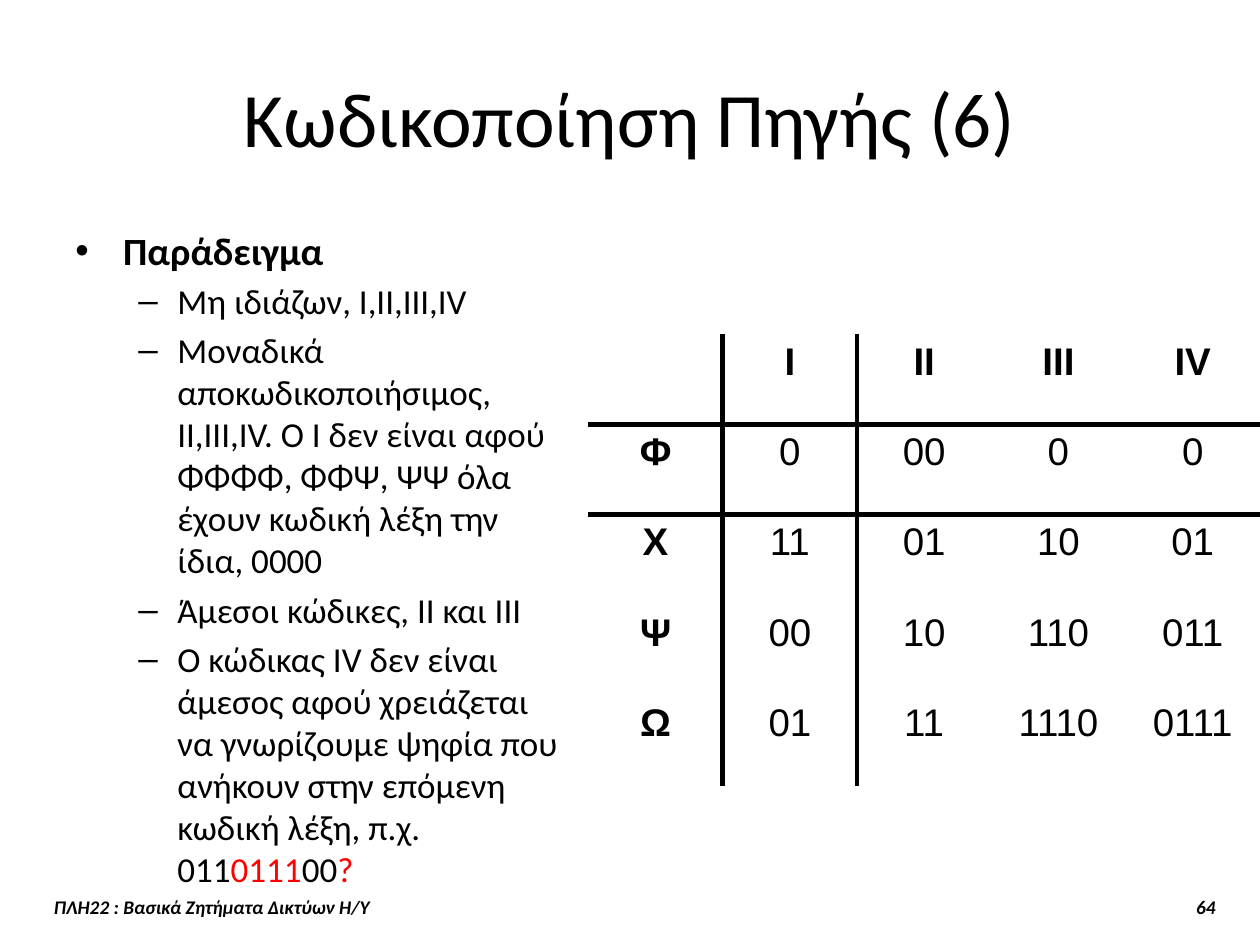
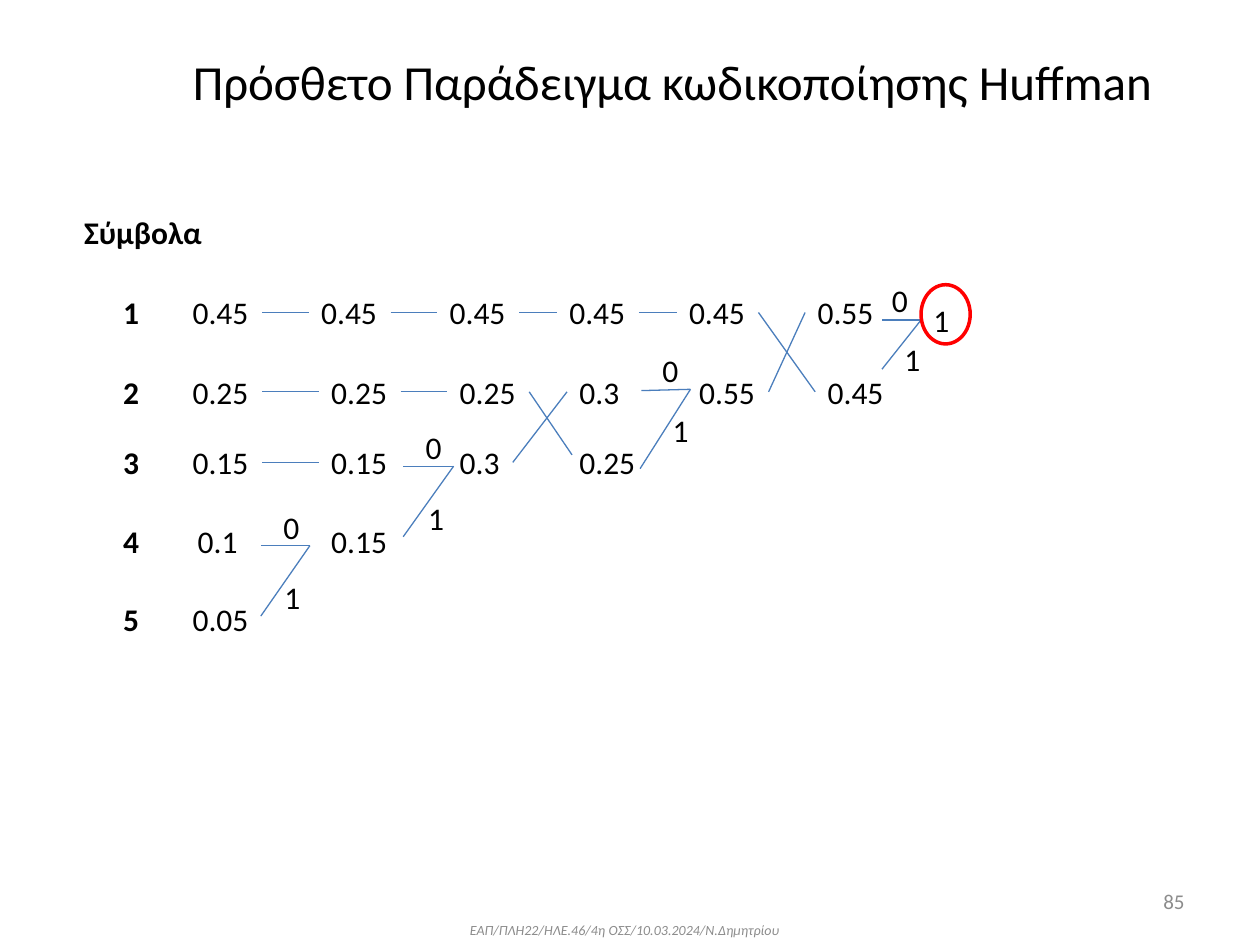
from dataclasses import dataclass

from lxml import etree
from pptx import Presentation
from pptx import util as u
from pptx.dml.color import RGBColor
from pptx.enum import shapes, text
from pptx.oxml import ns

LEFT, CENTER, RIGHT = text.PP_ALIGN.LEFT, text.PP_ALIGN.CENTER, text.PP_ALIGN.RIGHT
MIDDLE = text.MSO_ANCHOR.MIDDLE


@dataclass(frozen=True)
class Theme:
    font: str = "Calibri"
    table_font: str = "Arial"
    ink: str = "000000"
    accent: str = "FF0000"
    branch: str = "4B7EBC"
    muted: str = "8C8C8C"
    title: int = 44
    subtitle: int = 28
    head: int = 22
    body: int = 20
    label: int = 18
    number: int = 12
    footer: int = 11
    credit: int = 8


T = Theme()

POINTS = [
    ["Μη ιδιάζων, Ι,ΙΙ,ΙΙΙ,ΙV"],
    ["Μοναδικά αποκωδικοποιήσιμος, ΙΙ,ΙΙΙ,ΙV. Ο Ι δεν είναι αφού ΦΦΦΦ, ΦΦΨ, ΨΨ όλα "
     "έχουν κωδική λέξη την ίδια, 0000"],
    ["Άμεσοι κώδικες, ΙΙ και ΙΙΙ"],
    ["Ο κώδικας ΙV δεν είναι άμεσος αφού χρειάζεται να γνωρίζουμε ψηφία που ανήκουν "
     "στην επόμενη κωδική λέξη, π.χ. 011", "0111", "00", "?"],
]
CODES = [
    ["", "Ι", "ΙΙ", "ΙΙΙ", "ΙV"],
    ["Φ", "0", "00", "0", "0"],
    ["Χ", "11", "01", "10", "01"],
    ["Ψ", "00", "10", "110", "011"],
    ["Ω", "01", "11", "1110", "0111"],
]

# Huffman reduction: one row per symbol, one column per stage
STAGE_X = [1.43, 2.45, 3.47, 4.42, 5.37, 6.39]
ROW_Y = [2.28, 2.91, 3.47, 4.09, 4.71]
LOWER_SHIFT = 0.08
PROBABILITIES = [
    ["0.45", "0.45", "0.45", "0.45", "0.45", "0.55"],
    ["0.25", "0.25", "0.25", "0.3", "0.55", "0.45"],
    ["0.15", "0.15", "0.3", "0.25"],
    ["0.1", "0.15"],
    ["0.05"],
]
CARRIED = [4, 2, 1]  # straight links at the start of each row
SWAPS = [((2, 2), (1, 3)), ((0, 4), (1, 5)), ((1, 4), (0, 5))]
# upper start, lower start, tip, place of "0", place of "1"
MERGES = [
    ((2.07, 4.33), (2.07, 4.89), (2.46, 4.33), (2.15, 3.98), (2.16, 4.54)),
    ((3.2, 3.7), (3.2, 4.26), (3.6, 3.7), (3.28, 3.35), (3.3, 3.91)),
    ((5.09, 3.1), (5.08, 3.72), (5.48, 3.09), (5.16, 2.74), (5.24, 3.21)),
    ((7, 2.54), (7, 2.93), (7.31, 2.54), (6.98, 2.18), (7.08, 2.65)),
]


def inches(*values):
    return [u.Inches(v) for v in values]


def style(r, size, color=T.ink, font=T.font, bold=False, italic=False):
    f = r.font
    f.name, f.size, f.bold, f.italic = font, u.Pt(size), bold, italic
    f.color.rgb = RGBColor.from_string(color)


def add_title(s, words, box, size, align=CENTER, wrap=True):
    sp = s.shapes.title
    sp.left, sp.top, sp.width, sp.height = inches(*box)
    tf = sp.text_frame
    tf.text = words
    tf.word_wrap = wrap
    tf.auto_size = text.MSO_AUTO_SIZE.NONE
    tf.vertical_anchor = MIDDLE
    p = tf.paragraphs[0]
    p.alignment = align
    style(p.runs[0], size)


def add_text(s, words, box, size, align=LEFT, anchor=None, wrap=False, **look):
    sp = s.shapes.add_textbox(*inches(*box))
    tf = sp.text_frame
    tf.text = words
    tf.word_wrap = wrap
    tf.vertical_anchor = anchor
    p = tf.paragraphs[0]
    p.alignment = align
    for r in p.runs:
        style(r, size, **look)
    return sp


def add_label(s, words, x, y, width=0.33, **look):
    return add_text(s, words, (x, y, width, 0.4), T.label, **look)


def set_bullet(p, mark, margin, hang):
    pPr = p._p.get_or_add_pPr()
    pPr.set("marL", str(u.Inches(margin)))
    pPr.set("indent", str(-u.Inches(hang)))
    etree.SubElement(pPr, ns.qn("a:buFont")).set("typeface", "Arial")
    etree.SubElement(pPr, ns.qn("a:buChar")).set("char", mark)


def add_points(s, heading, points, box):
    tf = s.shapes.add_textbox(*inches(*box)).text_frame
    tf.word_wrap = True
    p = tf.paragraphs[0]
    p.text = heading
    set_bullet(p, "•", 0.38, 0.38)
    style(p.runs[0], T.head, bold=True)
    for pieces in points:
        p = tf.add_paragraph()
        p.level = 1
        p.space_before = u.Pt(0.2 * T.body)
        set_bullet(p, "–", 0.81, 0.31)
        for i, piece in enumerate(pieces):
            r = p.add_run()
            r.text = piece
            style(r, T.body, T.accent if i % 2 else T.ink)


def set_borders(cell, sides):
    """Draw 3 pt rules on the given sides, in the order L, R, T, B."""
    tcPr = cell._tc.get_or_add_tcPr()
    for i, side in enumerate(sides):
        ln = etree.Element(ns.qn(f"a:ln{side}"), w=str(u.Pt(3)))
        fill = etree.SubElement(ln, ns.qn("a:solidFill"))
        etree.SubElement(fill, ns.qn("a:srgbClr")).set("val", T.ink)
        tcPr.insert(i, ln)


def add_code_table(s, rows, box):
    table = s.shapes.add_table(len(rows), len(rows[0]), *inches(*box)).table
    table.first_row = table.horz_banding = False
    no_style = "{2D5ABB26-0587-4C30-8999-92F81FD0307C}"
    table._tbl.tblPr.find(ns.qn("a:tableStyleId")).text = no_style
    for i, row in enumerate(rows):
        for j, words in enumerate(row):
            cell = table.cell(i, j)
            cell.fill.background()
            sides = {0: "R", 1: "L"}.get(j, "") + {0: "B", 1: "T"}.get(i, "")
            set_borders(cell, sides)
            p = cell.text_frame.paragraphs[0]
            p.alignment = CENTER
            p.text = words
            for r in p.runs:
                style(r, T.head, font=T.table_font, bold=i == 0 or j == 0)


def add_line(s, start, end):
    line = s.shapes.add_connector(shapes.MSO_CONNECTOR.STRAIGHT, *inches(*start, *end))
    line.line.color.rgb = RGBColor.from_string(T.branch)
    line.line.width = u.Pt(0.75)
    etree.SubElement(line._element.spPr, ns.qn("a:effectLst"))
    return line


def link(s, a, b):
    """Join the right side of box a to the left side of box b."""
    line = add_line(s, (0, 0), (0, 0))
    line.begin_connect(a, 3)
    line.end_connect(b, 1)


def add_ring(s, box):
    sp = s.shapes.add_shape(shapes.MSO_SHAPE.OVAL, *inches(*box))
    sp.shadow.inherit = False
    sp.fill.background()
    sp.line.color.rgb = RGBColor.from_string(T.accent)
    sp.line.width = u.Pt(2)


def add_probabilities(s):
    cells = {}
    for i, row in enumerate(PROBABILITIES):
        add_label(s, str(i + 1), 0.88, ROW_Y[i], bold=True)
        for j, value in enumerate(row):
            x = STAGE_X[j] + (LOWER_SHIFT if i and j else 0)
            if value == "0.1":
                x += LOWER_SHIFT / 2
            width = 0.65 if len(value) == 4 else 0.52
            cells[i, j] = add_label(s, value, x, ROW_Y[i], width)
    return cells


def build_source_coding(prs):
    s = prs.slides.add_slide(prs.slide_layouts[5])
    add_title(s, "Κωδικοποίηση Πηγής (6)", (0.5, 0.3, 9, 1.25), T.title)
    add_points(s, "Παράδειγμα", POINTS, (0.5, 1.75, 4.03, 4.95))
    add_code_table(s, CODES, (4.67, 2.65, 5.33, 3.59))
    footer = add_text(s, "ΠΛΗ22 : Βασικά Ζητήματα Δικτύων Η/Υ\t64", (0.33, 7.02, 9.51, 0.35),
                      T.footer, anchor=MIDDLE, wrap=True, bold=True, italic=True)
    pPr = footer.text_frame.paragraphs[0]._p.get_or_add_pPr()
    tabs = etree.SubElement(pPr, ns.qn("a:tabLst"))
    etree.SubElement(tabs, ns.qn("a:tab"), pos=str(u.Inches(9.22)), algn="r")


def build_huffman(prs):
    s = prs.slides.add_slide(prs.slide_layouts[5])
    add_title(s, "Πρόσθετο Παράδειγμα κωδικοποίησης Huffman", (1.43, 0.36, 7.9, 0.57),
              T.subtitle, LEFT, wrap=False)
    add_label(s, "Σύμβολα", 0.57, 1.64, 1.14, bold=True)
    cells = add_probabilities(s)
    for i, count in enumerate(CARRIED):
        for j in range(count):
            link(s, cells[i, j], cells[i, j + 1])
    for a, b in SWAPS:
        link(s, cells[a], cells[b])
    add_line(s, (4.2, 3.11), (4.54, 3.61))
    for upper, lower, tip, zero, one in MERGES:
        add_line(s, upper, tip)
        add_line(s, lower, tip)
        add_label(s, "0", *zero)
        add_label(s, "1", *one)
    add_label(s, "1", 7.31, 2.34, 0.56, wrap=True)
    add_ring(s, (7.31, 2.26, 0.39, 0.47))
    add_text(s, "85", (7.17, 6.95, 2.33, 0.4), T.number, RIGHT, MIDDLE, True, color=T.muted)
    add_text(s, "ΕΑΠ/ΠΛΗ22/ΗΛΕ.46/4η ΟΣΣ/10.03.2024/Ν.Δημητρίου", (2.97, 7.18, 3.98, 0.4),
             T.credit, CENTER, MIDDLE, True, color=T.muted, italic=True)


def main():
    prs = Presentation()
    prs.slide_width, prs.slide_height = inches(10, 7.5)
    build_source_coding(prs)
    build_huffman(prs)
    prs.save("out.pptx")


if __name__ == "__main__":
    main()
